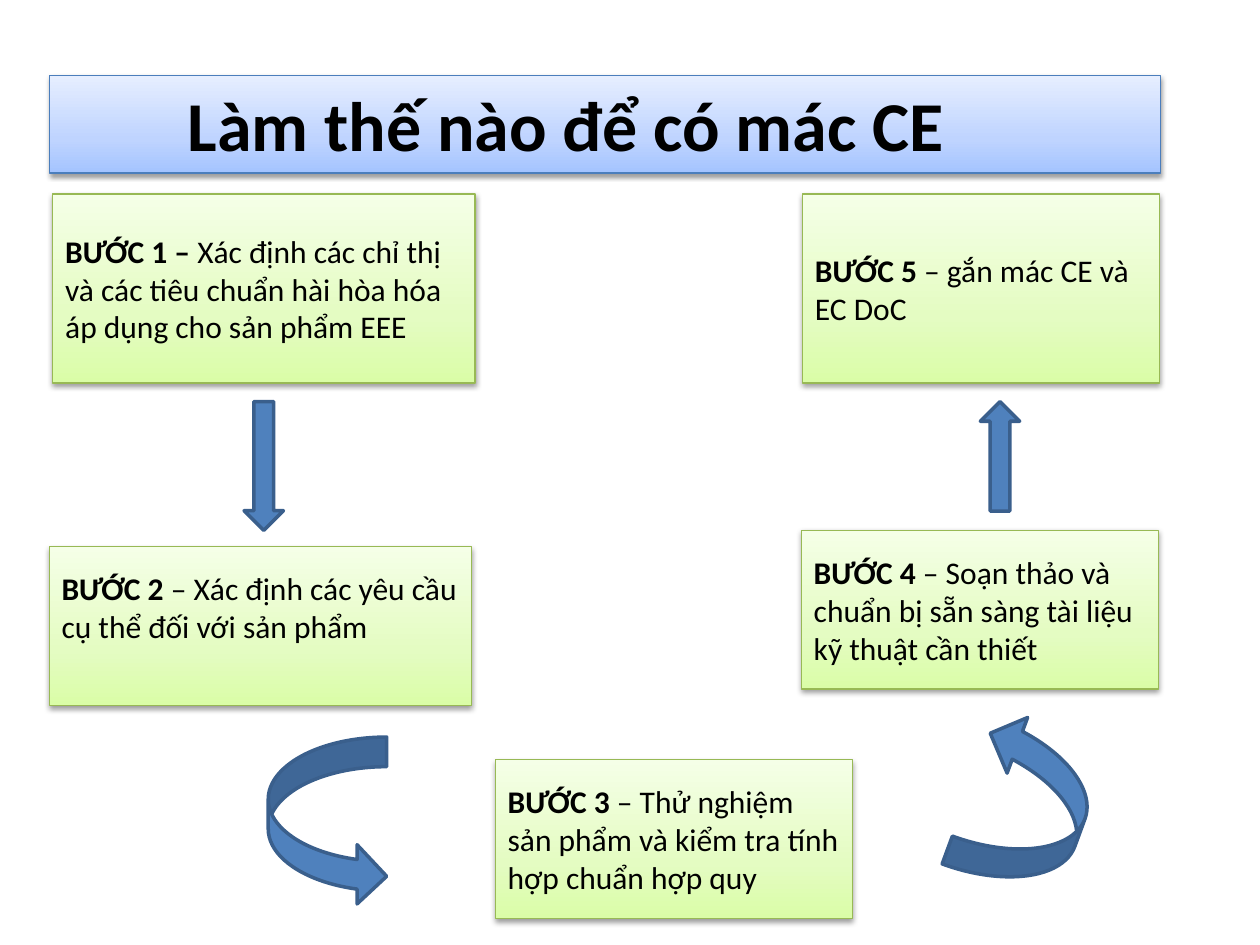
from copy import deepcopy
from dataclasses import dataclass

from lxml.etree import SubElement
from pptx import Presentation
from pptx.dml.color import RGBColor
from pptx.enum.shapes import MSO_SHAPE
from pptx.enum.text import MSO_ANCHOR, MSO_AUTO_SIZE, PP_ALIGN
from pptx.oxml.ns import qn
from pptx.util import Pt


@dataclass(frozen=True)
class Theme:
    font: str = "Calibri"
    title_size: float = 40
    step_size: float = 18
    ink: str = "000000"
    banner_stops: tuple = ("A4C4FF", "BFD4FF", "E6EEFF")
    banner_line: str = "4B7EBC"
    step_stops: tuple = ("DAFDA7", "E4FCC2", "F5FFE7")
    step_line: str = "98B955"
    arrow_fill: str = "4F81BD"
    arrow_line: str = "3A5F8C"
    panel_border: float = 0.75
    arrow_border: float = 2


THEME = Theme()
STOP_POSITIONS = (0, 0.35, 1)

STEPS = [
    ((30.2, 110.9, 241.2, 108), "BƯỚC 1 – ",
     "Xác định các chỉ thị và các tiêu chuẩn hài hòa hóa áp dụng cho sản phẩm EEE", 0),
    ((28.1, 312.5, 241.2, 90.7), "BƯỚC 2 ",
     "– Xác định các yêu cầu cụ thể đối với sản phẩm", 22),
    ((458.6, 110.9, 204, 108), "BƯỚC 5 ", "– gắn mác CE và EC DoC", 0),
    ((457.9, 303.1, 204, 90.7), "BƯỚC 4 ",
     "– Soạn thảo và chuẩn bị sẵn sàng tài liệu kỹ thuật cần thiết", 0),
    ((283, 434.2, 204, 90.7), "BƯỚC 3 ",
     "– Thử nghiệm sản phẩm và kiểm tra tính hợp chuẩn hợp quy", 0),
]

ARROWS = [
    (MSO_SHAPE.DOWN_ARROW, (139.5, 229.5, 22.5, 73.6), 0),
    (MSO_SHAPE.CURVED_RIGHT_ARROW, (153.3, 421.2, 67.7, 96.5), 0),
    (MSO_SHAPE.CURVED_UP_ARROW, (538.6, 426.2, 96.5, 67.7), 290.2),
    (MSO_SHAPE.UP_ARROW, (560.2, 229.5, 22.5, 62.6), 0),
]


def points(box):
    return [Pt(length) for length in box]


def style_panel(panel, stop_colors, border_color):
    panel.fill.gradient()
    panel.fill.gradient_angle = 90
    properties = panel._element.spPr
    stop_list = properties.find(f".//{qn('a:gsLst')}")
    stop_list.append(deepcopy(stop_list[-1]))
    for stop, position, color in zip(panel.fill.gradient_stops, STOP_POSITIONS, stop_colors):
        stop.position = position
        stop.color.rgb = RGBColor.from_string(color)
    panel.line.color.rgb = RGBColor.from_string(border_color)
    panel.line.width = Pt(THEME.panel_border)
    panel.shadow.inherit = False
    shadow = SubElement(properties.find(qn("a:effectLst")), qn("a:outerShdw"),
                        blurRad=str(Pt(3.15)), dist=str(Pt(1.57)),
                        dir="5400000", rotWithShape="0")
    shade = SubElement(shadow, qn("a:srgbClr"), val=THEME.ink)
    SubElement(shade, qn("a:alpha"), val="38000")


def add_run(paragraph, text, size, bold):
    run = paragraph.add_run()
    run.text = text
    run.font.name = THEME.font
    run.font.size = Pt(size)
    run.font.bold = bold
    run.font.color.rgb = RGBColor.from_string(THEME.ink)


def place_title(slide, box, text):
    banner = slide.shapes.title
    banner.left, banner.top, banner.width, banner.height = points(box)
    style_panel(banner, THEME.banner_stops, THEME.banner_line)
    frame = banner.text_frame
    frame.auto_size = MSO_AUTO_SIZE.NONE
    frame.word_wrap = True
    frame.vertical_anchor = MSO_ANCHOR.TOP
    frame.margin_left = Pt(79.2)
    heading = frame.paragraphs[0]
    heading.alignment = PP_ALIGN.LEFT
    add_run(heading, text, THEME.title_size, True)


def place_step(slide, box, label, description, space_below):
    step = slide.shapes.add_shape(MSO_SHAPE.RECTANGLE, *points(box))
    style_panel(step, THEME.step_stops, THEME.step_line)
    frame = step.text_frame
    frame.word_wrap = True
    frame.vertical_anchor = MSO_ANCHOR.MIDDLE
    frame.margin_bottom = Pt(3.6 + space_below)
    instruction = frame.paragraphs[0]
    instruction.alignment = PP_ALIGN.LEFT
    add_run(instruction, label, THEME.step_size, True)
    add_run(instruction, description, THEME.step_size, False)


def place_arrow(slide, kind, box, rotation):
    arrow = slide.shapes.add_shape(kind, *points(box))
    arrow.rotation = rotation
    arrow.fill.solid()
    arrow.fill.fore_color.rgb = RGBColor.from_string(THEME.arrow_fill)
    arrow.line.color.rgb = RGBColor.from_string(THEME.arrow_line)
    arrow.line.width = Pt(THEME.arrow_border)
    arrow.shadow.inherit = False


def main():
    deck = Presentation()
    deck.slide_width, deck.slide_height = Pt(720), Pt(540)
    slide = deck.slides.add_slide(deck.slide_layouts[5])
    place_title(slide, (28.1, 43.2, 635, 55.7), "Làm thế nào để có mác CE")
    for step in STEPS:
        place_step(slide, *step)
    for arrow in ARROWS:
        place_arrow(slide, *arrow)
    deck.save("out.pptx")


if __name__ == "__main__":
    main()
